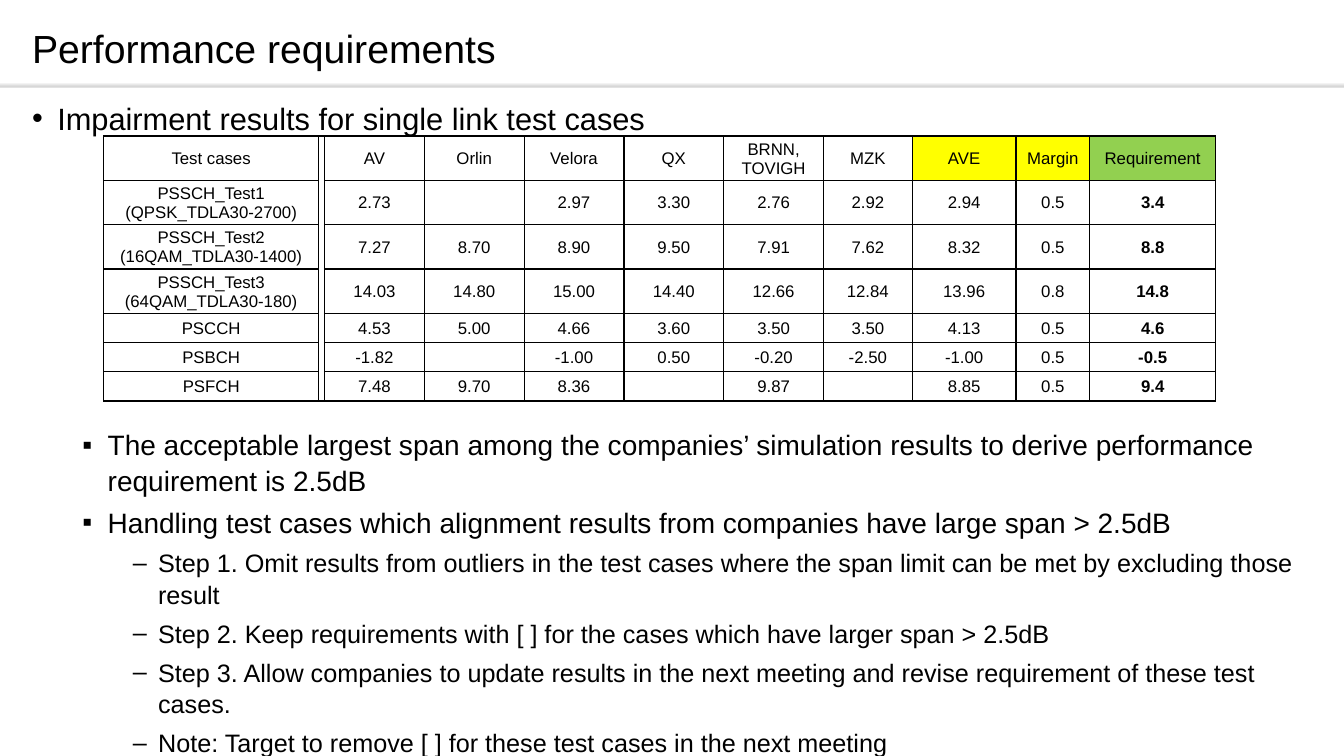
import dataclasses

import pptx
import pptx.dml.color
import pptx.enum.shapes
import pptx.enum.text
import pptx.oxml
import pptx.oxml.ns
import pptx.util

Inches = pptx.util.Inches
Pt = pptx.util.Pt
NAMESPACE = pptx.oxml.ns.nsdecls("a")


@dataclasses.dataclass(frozen=True)
class Theme:
    font: str = "Arial"
    text: str = "000000"
    background: str = "FFFFFF"
    derived: str = "FFFF00"
    requirement: str = "92D050"
    rule_stops: tuple = ((0, "FAFAFA"), (74, "D7D7D7"), (83, "D7D7D7"), (100, "E4E4E4"))
    title_size: int = 28
    level_sizes: tuple = (22, 20, 18)
    table_size: int = 12
    border_width: int = 1


BULLETS = "•▪‒"
SPACE_BEFORE = (10, 5, 5)

HEADING = [(0, "Impairment results for single link test cases")]
GUIDANCE = [
    (1, "The acceptable largest span among the companies’ simulation results to derive "
        "performance requirement is 2.5dB"),
    (1, "Handling test cases which alignment results from companies have large span > 2.5dB"),
    (2, "Step 1. Omit results from outliers in the test cases where the span limit can be "
        "met by excluding those result"),
    (2, "Step 2. Keep requirements with [ ] for the cases which have larger span > 2.5dB"),
    (2, "Step 3. Allow companies to update results in the next meeting and revise "
        "requirement of these test cases."),
    (2, "Note: Target to remove [ ] for these test cases in the next meeting"),
]

# The second column is an empty gap that separates test cases from results.
RESULTS = [
    ["Test cases", "", "AV", "Orlin", "Velora", "QX", "BRNN,\nTOVIGH", "MZK",
     "AVE", "Margin", "Requirement"],
    ["PSSCH_Test1\n(QPSK_TDLA30-2700)", "", "2.73", "", "2.97", "3.30", "2.76", "2.92",
     "2.94", "0.5", "3.4"],
    ["PSSCH_Test2\n(16QAM_TDLA30-1400)", "", "7.27", "8.70", "8.90", "9.50", "7.91", "7.62",
     "8.32", "0.5", "8.8"],
    ["PSSCH_Test3\n(64QAM_TDLA30-180)", "", "14.03", "14.80", "15.00", "14.40", "12.66",
     "12.84", "13.96", "0.8", "14.8"],
    ["PSCCH", "", "4.53", "5.00", "4.66", "3.60", "3.50", "3.50", "4.13", "0.5", "4.6"],
    ["PSBCH", "", "-1.82", "", "-1.00", "0.50", "-0.20", "-2.50", "-1.00", "0.5", "-0.5"],
    ["PSFCH", "", "7.48", "9.70", "8.36", "", "9.87", "", "8.85", "0.5", "9.4"],
]
COLUMN_WIDTHS = [2.13, 0.05] + [0.99] * 5 + [0.88, 1.03, 0.73, 1.25]
ROW_HEIGHTS = [0.44] * 4 + [0.29] * 3
GAP_COLUMN = 1
REQUIREMENT_COLUMN = len(COLUMN_WIDTHS) - 1


class SlideBuilder:
    def __init__(self, slide, theme):
        self.slide = slide
        self.theme = theme

    def style(self, paragraph, size, bold=False):
        font = paragraph.font
        font.name = self.theme.font
        font.size = Pt(size)
        font.bold = bold
        font.color.rgb = pptx.dml.color.RGBColor.from_string(self.theme.text)

    def rule(self, left, top, width, height):
        """Draw the shaded band below the title."""
        band = self.slide.shapes.add_shape(
            pptx.enum.shapes.MSO_SHAPE.RECTANGLE,
            Inches(left), Inches(top), Inches(width), Inches(height))
        band.shadow.inherit = False
        band.line.fill.background()
        stops = "".join(
            f'<a:gs pos="{position * 1000}"><a:srgbClr val="{color}"/></a:gs>'
            for position, color in self.theme.rule_stops)
        gradient = pptx.oxml.parse_xml(
            f'<a:gradFill {NAMESPACE}><a:gsLst>{stops}</a:gsLst>'
            '<a:lin ang="5400000" scaled="0"/></a:gradFill>')
        geometry = band._element.spPr.find(pptx.oxml.ns.qn("a:prstGeom"))
        geometry.addnext(gradient)

    def text_frame(self, left, top, width, height):
        frame = self.slide.shapes.add_textbox(
            Inches(left), Inches(top), Inches(width), Inches(height)).text_frame
        frame.word_wrap = True
        return frame

    def title(self, text, left, top, width, height):
        frame = self.text_frame(left, top, width, height)
        frame.vertical_anchor = pptx.enum.text.MSO_ANCHOR.MIDDLE
        paragraph = frame.paragraphs[0]
        paragraph.text = text
        paragraph.line_spacing = 0.9
        self.style(paragraph, self.theme.title_size)

    def bullets(self, items, left, top, width, height):
        frame = self.text_frame(left, top, width, height)
        for index, (level, text) in enumerate(items):
            paragraph = frame.add_paragraph() if index else frame.paragraphs[0]
            paragraph.text = text
            paragraph.level = level
            paragraph.line_spacing = 1.05
            paragraph.space_before = Pt(SPACE_BEFORE[level])
            properties = paragraph._p.get_or_add_pPr()
            properties.set("marL", str(Inches(0.25 + 0.5 * level)))
            properties.set("indent", str(Inches(-0.25)))
            properties.append(pptx.oxml.parse_xml(
                f'<a:buFont {NAMESPACE} typeface="{self.theme.font}"/>'))
            properties.append(pptx.oxml.parse_xml(
                f'<a:buChar {NAMESPACE} char="{BULLETS[level]}"/>'))
            self.style(paragraph, self.theme.level_sizes[level])

    def cell_borders(self, cell):
        properties = cell._tc.get_or_add_tcPr()
        for side in "LRTB":
            properties.append(pptx.oxml.parse_xml(
                f'<a:ln{side} {NAMESPACE} w="{Pt(self.theme.border_width)}"><a:solidFill>'
                f'<a:srgbClr val="{self.theme.text}"/></a:solidFill></a:ln{side}>'))

    def cell(self, cell, text, fill, bold):
        cell.margin_left = cell.margin_right = cell.margin_top = Inches(0.01)
        cell.margin_bottom = 0
        cell.vertical_anchor = pptx.enum.text.MSO_ANCHOR.MIDDLE
        self.cell_borders(cell)
        cell.fill.solid()
        cell.fill.fore_color.rgb = pptx.dml.color.RGBColor.from_string(fill)
        paragraph = cell.text_frame.paragraphs[0]
        paragraph.text = text
        paragraph.alignment = pptx.enum.text.PP_ALIGN.CENTER
        self.style(paragraph, self.theme.table_size, bold)

    def results_table(self, rows, left, top):
        table = self.slide.shapes.add_table(
            len(rows), len(COLUMN_WIDTHS), Inches(left), Inches(top),
            Inches(sum(COLUMN_WIDTHS)), Inches(sum(ROW_HEIGHTS))).table
        table.first_row = table.horz_banding = False
        for column, width in zip(table.columns, COLUMN_WIDTHS):
            column.width = Inches(width)
        for row, height in zip(table.rows, ROW_HEIGHTS):
            row.height = Inches(height)
        header_fills = {"AVE": self.theme.derived, "Margin": self.theme.derived,
                        "Requirement": self.theme.requirement}
        for row_index, values in enumerate(rows):
            for column_index, value in enumerate(values):
                self.cell(table.cell(row_index, column_index), value,
                          header_fills.get(value, self.theme.background),
                          row_index > 0 and column_index == REQUIREMENT_COLUMN)
        table.cell(0, GAP_COLUMN).merge(table.cell(len(rows) - 1, GAP_COLUMN))


def main():
    presentation = pptx.Presentation()
    presentation.slide_width = Inches(13.33)
    presentation.slide_height = Inches(7.5)
    slide = presentation.slides.add_slide(presentation.slide_layouts[6])
    builder = SlideBuilder(slide, Theme())
    builder.rule(0, 0.82, 13.33, 0.05)
    builder.title("Performance requirements", 0.22, 0.18, 12.94, 0.65)
    builder.bullets(HEADING, 0.22, 0.92, 12.94, 0.45)
    builder.bullets(GUIDANCE, 0.22, 4.18, 12.94, 3.32)
    builder.results_table(RESULTS, 1.03, 1.35)
    presentation.save("out.pptx")


if __name__ == "__main__":
    main()
